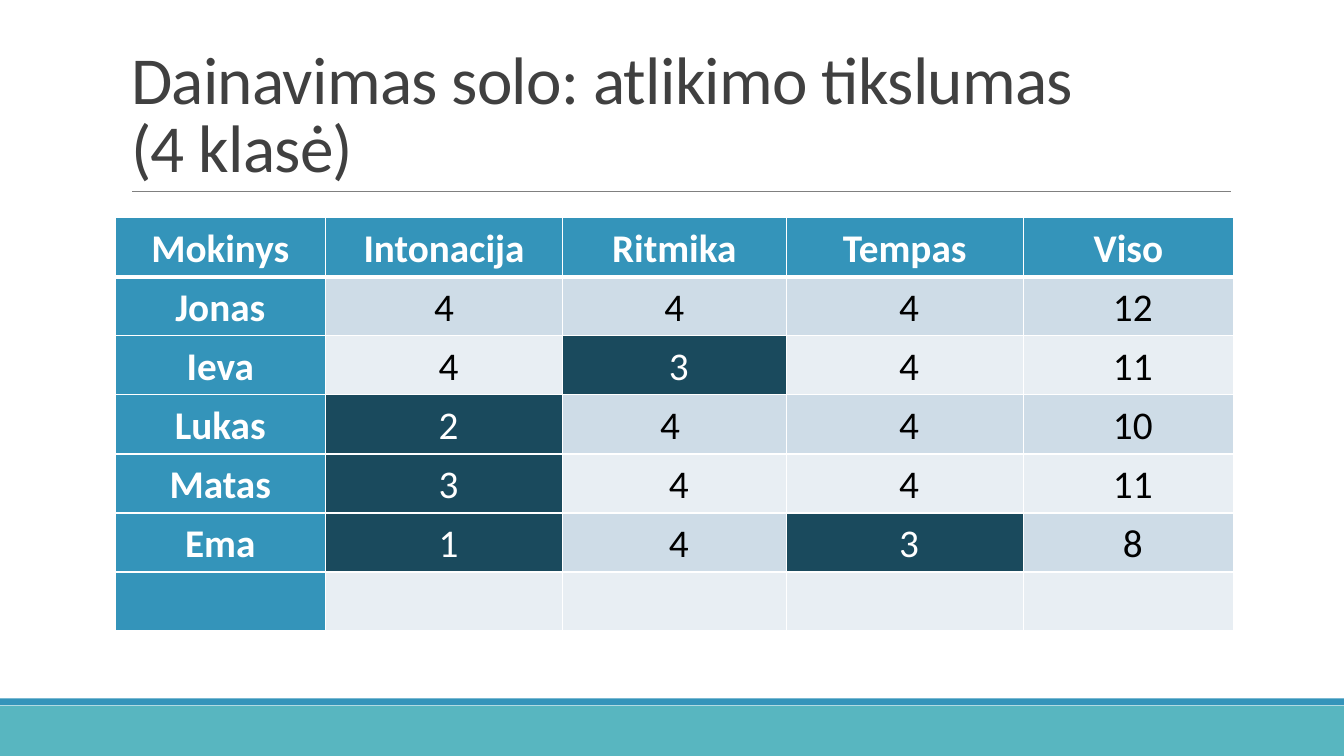
import pptx
import pptx.dml.color
import pptx.enum.shapes
import pptx.enum.text
import pptx.oxml
import pptx.oxml.ns
import pptx.util
from lxml import etree

CELL = 0.1  # inches per grid column and grid row
COLS, ROWS = 133.33, 75
BLUE, TEAL, DARK, WHITE = "3494BA", "58B6C0", "1A4A5D", "FFFFFF"
BANDS = ("E8EEF3", "CEDCE7")
WIDTHS = (20.9, 23.5, 22.2, 23.5, 20.9)
ROW_HEIGHT = 5.86
SCORES = (
    ("Mokinys", "Intonacija", "Ritmika", "Tempas", "Viso"),
    ("Jonas", "4", " 4 ", " 4", " 12"),
    ("Ieva", " 4", " 3", " 4", " 11"),
    ("Lukas", " 2", "4 ", " 4", " 10"),
    ("Matas", " 3", " 4", " 4", " 11"),
    ("Ema", " 1", " 4", " 3", " 8"),
    ("",) * 5,
)
WEAK = {(2, 2), (3, 1), (4, 1), (5, 1), (5, 3)}


def grid(*cells):
    return [pptx.util.Inches(n * CELL) for n in cells]


def rgb(value):
    return pptx.dml.color.RGBColor.from_string(value)


def format_font(font, color, **values):
    font.color.rgb = rgb(color)
    for name, value in values.items():
        setattr(font, name, value)


def add_band(s, top, height, color):
    sp = s.shapes.add_shape(pptx.enum.shapes.MSO_SHAPE.RECTANGLE,
                            *grid(0, top, COLS, height))
    sp.shadow.inherit = False
    sp.fill.solid()
    sp.fill.fore_color.rgb = rgb(color)
    sp.line.fill.background()


def add_rule(s, left, right, y):
    line = s.shapes.add_connector(pptx.enum.shapes.MSO_CONNECTOR.STRAIGHT,
                                  *grid(left, y, right, y))
    line.line.color.rgb = rgb("808080")
    line.line.width = pptx.util.Pt(0.5)
    etree.SubElement(line._element.spPr, pptx.oxml.ns.qn("a:effectLst"))


def set_title(s, lines):
    sp = s.shapes.title
    sp.left, sp.top, sp.width, sp.height = grid(12, 3.1, 110, 15.9)
    tf = sp.text_frame
    settings = {"text": "\n".join(lines), "word_wrap": True,
                "auto_size": pptx.enum.text.MSO_AUTO_SIZE.NONE,
                "vertical_anchor": pptx.enum.text.MSO_ANCHOR.BOTTOM}
    for name, value in settings.items():
        setattr(tf, name, value)
    for p in tf.paragraphs:
        p.alignment = pptx.enum.text.PP_ALIGN.LEFT
        p.line_spacing = 0.85
        p.space_before = pptx.util.Pt(0)
        for r in p.runs:
            format_font(r.font, "404040", name="Calibri", size=pptx.util.Pt(48))
            r.font._element.set("spc", "-50")


def set_borders(cell, row):
    """Draw white borders, with a thick one under the header row."""
    thick = {(0, "B"), (1, "T")}
    for side in "LRTB":
        width = pptx.util.Pt(3 if (row, side) in thick else 1)
        cell._tc.get_or_add_tcPr().append(pptx.oxml.parse_xml(
            f'<a:ln{side} {pptx.oxml.ns.nsdecls("a")} w="{width}"><a:solidFill>'
            f'<a:srgbClr val="{WHITE}"/></a:solidFill></a:ln{side}>'))


def fill_cell(cell, row, col, text):
    heading = row == 0 or col == 0
    weak = (row, col) in WEAK
    margins = {"margin_left": 0.07, "margin_right": 0.07,
               "margin_top": 0, "margin_bottom": 0}
    for name, value in margins.items():
        setattr(cell, name, pptx.util.Inches(value))
    set_borders(cell, row)
    cell.fill.solid()
    cell.fill.fore_color.rgb = rgb(
        BLUE if heading else DARK if weak else BANDS[row % 2])
    if text:
        p = cell.text_frame.paragraphs[0]
        p.alignment = pptx.enum.text.PP_ALIGN.CENTER
        p.line_spacing = 1.15
        r = p.add_run()
        r.text = text
        format_font(r.font, WHITE if heading or weak else "000000",
                    name="Calibri", size=pptx.util.Pt(28), bold=heading)


def add_score_table(s):
    table = s.shapes.add_table(
        len(SCORES), len(WIDTHS),
        *grid(11.4, 21.6, sum(WIDTHS), ROW_HEIGHT * len(SCORES))).table
    for column, width in zip(table.columns, grid(*WIDTHS)):
        column.width = width
    for row, texts in enumerate(SCORES):
        table.rows[row].height = grid(ROW_HEIGHT)[0]
        for col, text in enumerate(texts):
            fill_cell(table.cell(row, col), row, col, text)


def main():
    prs = pptx.Presentation()
    prs.slide_width, prs.slide_height = grid(COLS, ROWS)
    s = prs.slides.add_slide(prs.slide_layouts[5])
    add_band(s, 70, 5, TEAL)
    add_band(s, 69.3, 0.66, BLUE)
    add_rule(s, 13.1, 122.1, 19)
    add_score_table(s)
    set_title(s, ("Dainavimas solo: atlikimo tikslumas", "(4 klasė)"))
    prs.save("out.pptx")


if __name__ == "__main__":
    main()
